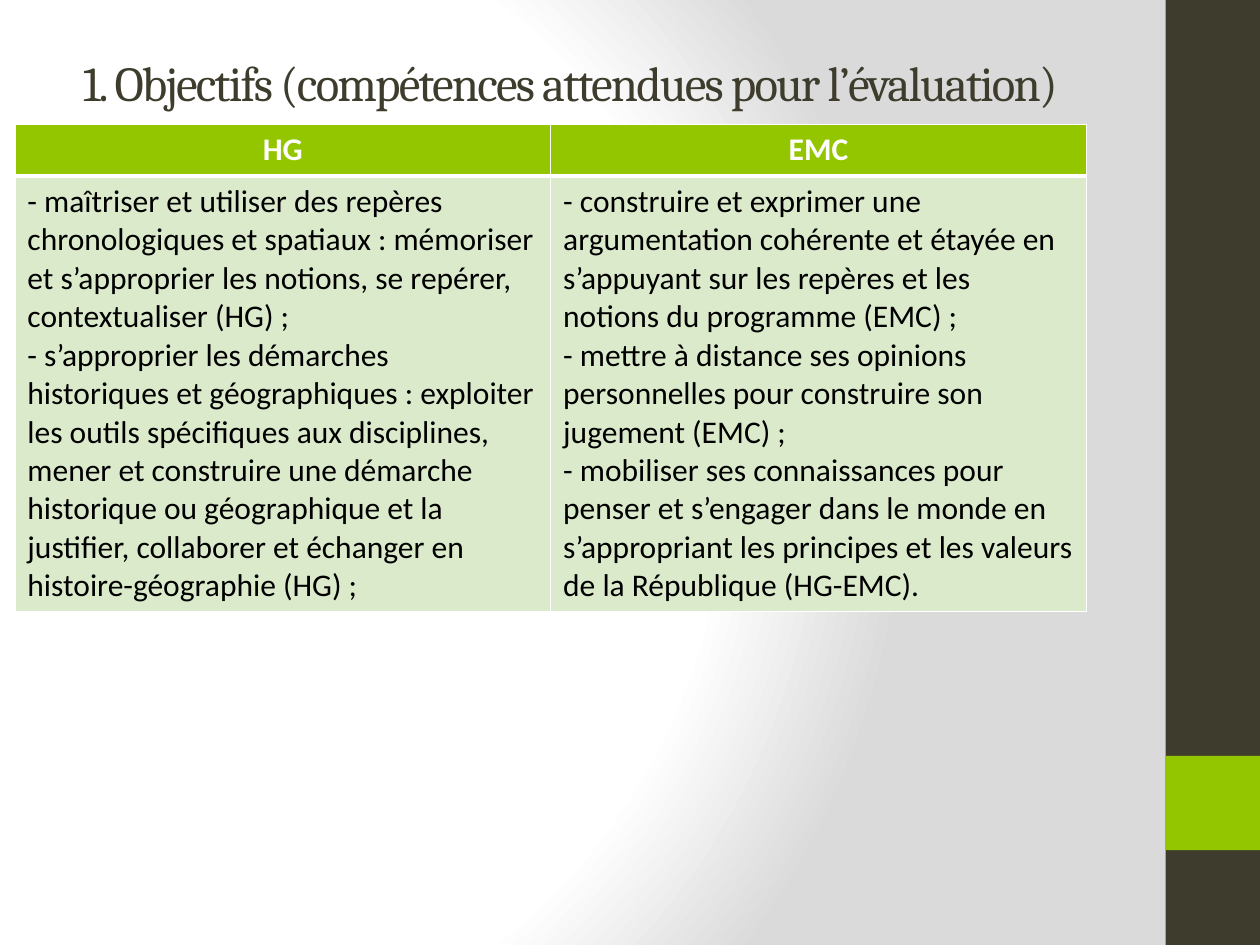
from pptx import Presentation
from pptx.dml.color import RGBColor
from pptx.enum.shapes import MSO_SHAPE
from pptx.enum.text import MSO_ANCHOR, MSO_AUTO_SIZE, PP_ALIGN
from pptx.oxml import parse_xml
from pptx.oxml.ns import nsdecls
from pptx.util import Cm, Pt

# Content
TITLE = "1. Objectifs (compétences attendues pour l’évaluation)"
COLUMNS = [
    ("HG", [
        "- maîtriser et utiliser des repères chronologiques et spatiaux : mémoriser "
        "et s’approprier les notions, se repérer, contextualiser (HG) ;",
        "- s’approprier les démarches historiques et géographiques : exploiter les "
        "outils spécifiques aux disciplines, mener et construire une démarche "
        "historique ou géographique et la justifier, collaborer et échanger en "
        "histoire-géographie (HG) ;",
    ]),
    ("EMC", [
        "- construire et exprimer une argumentation cohérente et étayée en "
        "s’appuyant sur les repères et les notions du programme (EMC) ;",
        "- mettre à distance ses opinions personnelles pour construire son "
        "jugement (EMC) ;",
        "- mobiliser ses connaissances pour penser et s’engager dans le monde en "
        "s’appropriant les principes et les valeurs de la République (HG-EMC).",
    ]),
]
DARK, GREEN, PALE, WHITE, BLACK = "3E3D2D", "94C600", "DCEACC", "FFFFFF", "000000"
BACKGROUND_STOPS = [(0, WHITE), (75, WHITE), (100, "DADADA")]
# Side bands: left, top, width, height in cm, colour
BANDS = [(23.5, 0, 1.9, 19.05, DARK), (23.5, 15.24, 1.9, 1.9, GREEN)]
ROW_HEIGHTS = [1.04, 8.64]
COLUMN_WIDTH = 10.8


def paint(color_format, hex_color):
    color_format.rgb = RGBColor.from_string(hex_color)


def add_run(p, text, font, size, color, bold=False):
    r = p.add_run()
    r.text = text
    r.font.name, r.font.size, r.font.bold = font, Pt(size), bold
    paint(r.font.color, color)
    return r


def set_background(s):
    stops = "".join(f'<a:gs pos="{pos * 1000}"><a:srgbClr val="{color}"/></a:gs>'
                    for pos, color in BACKGROUND_STOPS)
    s.element.cSld.insert(0, parse_xml(
        f'<p:bg {nsdecls("p", "a")}><p:bgPr><a:gradFill rotWithShape="1">'
        f'<a:gsLst>{stops}</a:gsLst><a:path path="circle">'
        '<a:fillToRect l="20000" t="50000" r="100000" b="50000"/></a:path>'
        '</a:gradFill><a:effectLst/></p:bgPr></p:bg>'))


def set_borders(cell, widths):
    tc_pr = cell._tc.get_or_add_tcPr()
    for i, (side, width) in enumerate(zip("LRTB", widths)):
        tc_pr.insert(i, parse_xml(
            f'<a:ln{side} {nsdecls("a")} w="{Pt(width)}"><a:solidFill>'
            f'<a:srgbClr val="{WHITE}"/></a:solidFill></a:ln{side}>'))


def fill_cell(cell, paragraphs, fill, color, header):
    cell.fill.solid()
    paint(cell.fill.fore_color, fill)
    set_borders(cell, (1, 1, 1, 3) if header else (1, 1, 3, 1))
    tf = cell.text_frame
    for i, text in enumerate(paragraphs):
        p = tf.add_paragraph() if i else tf.paragraphs[0]
        p.alignment = PP_ALIGN.CENTER if header else PP_ALIGN.LEFT
        add_run(p, text, "Calibri", 18, color, header)


prs = Presentation()
prs.slide_width, prs.slide_height = Cm(25.4), Cm(19.05)
s = prs.slides.add_slide(prs.slide_layouts[5])
set_background(s)

# Side bands
for left, top, width, height, color in BANDS:
    sp = s.shapes.add_shape(MSO_SHAPE.RECTANGLE, Cm(left), Cm(top), Cm(width), Cm(height))
    sp.shadow.inherit = False
    sp.fill.solid()
    paint(sp.fill.fore_color, color)
    sp.line.fill.background()

# Title
title = s.shapes.title
title.left, title.top, title.width, title.height = Cm(1.09), Cm(-0.94), Cm(22.86), Cm(3.18)
tf = title.text_frame
tf.word_wrap, tf.auto_size = True, MSO_AUTO_SIZE.NONE
tf.vertical_anchor = MSO_ANCHOR.BOTTOM
tf.margin_left, tf.margin_bottom = Cm(0.58), 0
p = tf.paragraphs[0]
p.alignment = PP_ALIGN.LEFT
r = add_run(p, TITLE, "Cambria", 27.9, DARK)
r.font._element.set("spc", "-100")

# Table of skills
frame = s.shapes.add_table(2, len(COLUMNS), Cm(0.3), Cm(2.51),
                           Cm(COLUMN_WIDTH * len(COLUMNS)), Cm(sum(ROW_HEIGHTS)))
table = frame.table
for row, height in zip(table.rows, ROW_HEIGHTS):
    row.height = Cm(height)
for c, (heading, skills) in enumerate(COLUMNS):
    table.columns[c].width = Cm(COLUMN_WIDTH)
    fill_cell(table.cell(0, c), [heading], GREEN, WHITE, True)
    fill_cell(table.cell(1, c), skills, PALE, BLACK, False)

prs.save("out.pptx")
